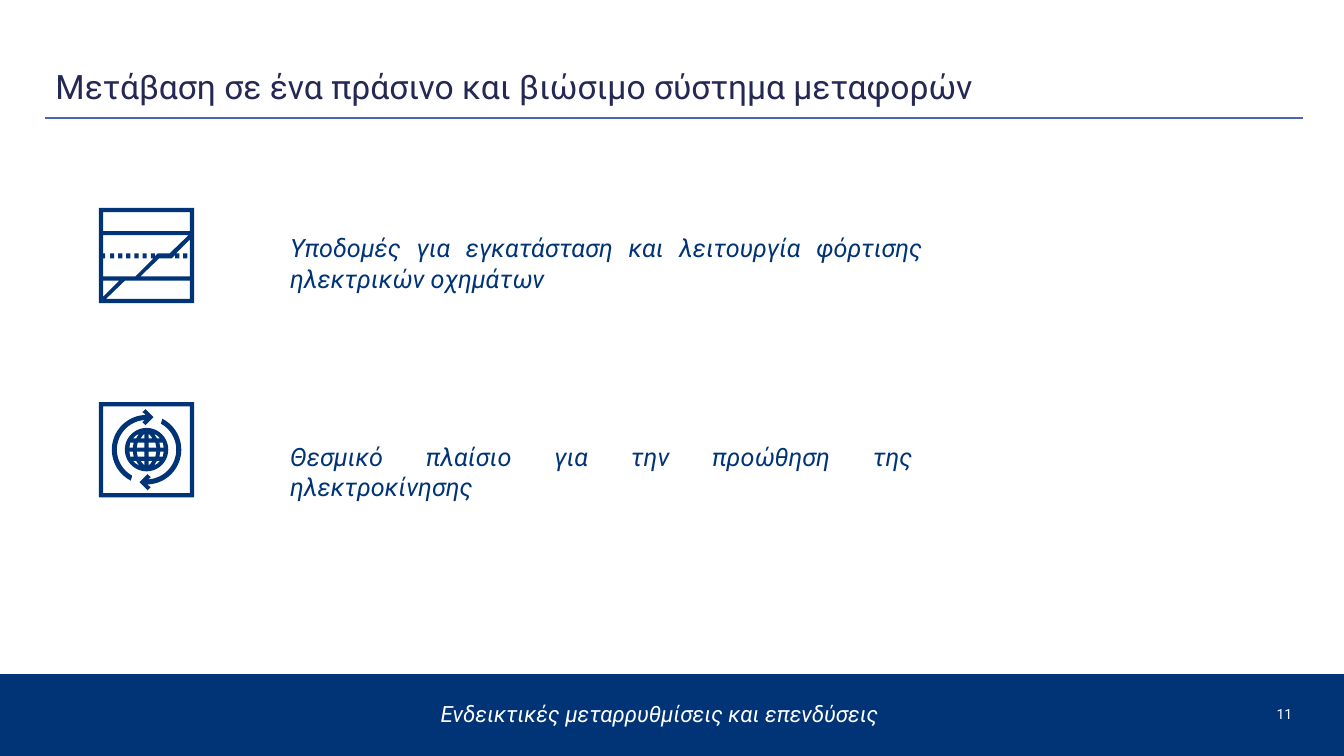
from math import cos, radians, sin

from lxml import etree
from pptx import Presentation
from pptx.dml.color import RGBColor
from pptx.enum import shapes as kinds, text as txt
from pptx.oxml import ns
from pptx.util import Pt

HUES = {"navy": "013476", "body": "003476", "title": "242852",
        "rule": "4A66AC", "white": "FFFFFF"}
FONT = "Roboto"
ICON = 68  # side of an icon
MID = ICON / 2


def hue(name):
    return RGBColor.from_string(HUES[name])


def write(shape, words, size, color, align, pads, slant=False,
          anchor=txt.MSO_ANCHOR.TOP):
    frame = shape.text_frame
    frame.word_wrap = True
    frame.auto_size = txt.MSO_AUTO_SIZE.NONE
    frame.vertical_anchor = anchor
    (frame.margin_left, frame.margin_top,
     frame.margin_right, frame.margin_bottom) = map(Pt, pads)
    para = frame.paragraphs[0]
    para.text = words
    para.alignment = align
    para.space_before = Pt(0)
    font = para.font
    font.name, font.size, font.italic = FONT, Pt(size), slant
    font.bold = False
    font.color.rgb = hue(color)


def label(slide, box, *args, **opts):
    write(slide.shapes.add_textbox(*map(Pt, box)), *args, **opts)


def trace(parent, left, top, loops):
    """Draw closed loops as one filled outline; inner loops are holes."""
    def place(x, y):
        return Pt(left + x), Pt(top + y)

    pen = None
    for loop in loops:
        first, *rest = [place(x, y) for x, y in loop]
        if pen is None:
            pen = parent.build_freeform(*first, scale=1.0)
        else:
            pen.move_to(*first)
        pen.add_line_segments(rest, close=True)
    shape = pen.convert_to_shape()
    shape.shadow.inherit = False
    shape.fill.solid()
    shape.fill.fore_color.rgb = hue("navy")
    shape.line.fill.background()


def rect(x1, y1, x2, y2):
    return [(x1, y1), (x1, y2), (x2, y2), (x2, y1)]


def arc(radius, start, stop, count=40):
    turns = [radians(start + (stop - start) * i / count)
             for i in range(count + 1)]
    return [(MID + radius * cos(t), MID + radius * sin(t)) for t in turns]


# Icon: charging road chart
def chart_icon(slide, left, top):
    upper = [(3, 49), (3, 36), (4.5, 36), (4.5, 32.5), (3, 32.5), (3, 19.5),
             (64, 19.5), (50.5, 32.5), (42, 32.5), (40, 34.5), (40, 32.5),
             (37, 32.5), (37, 36), (39, 36), (26, 49)]
    lower = [(65, 49), (29.5, 49), (43, 36), (52, 36), (54.5, 33.5),
             (54.5, 36), (57.5, 36), (57.5, 32.5), (55, 32.5), (65, 22.5)]
    corner = [(3, 52), (14.5, 52), (3, 63.5)]
    base = [(5, 65), (18.5, 52), (65, 52), (65, 65)]
    dots = [rect(7.9 + 5.8 * i, 32.5, 10.9 + 5.8 * i, 36)
            for i in (0, 1, 2, 3, 4, 9)]
    trace(slide.shapes, left, top,
          [rect(0, 0, ICON, ICON), rect(3, 3, 65, 16.5),
           upper, lower, corner, base, *dots])


# Icon: globe between two turning arrows
def globe_icon(slide, left, top):
    group = slide.shapes.add_group_shape().shapes
    trace(group, left, top, [rect(0, 0, ICON, ICON), rect(3, 3, 65, 65)])

    head = [(33.3, 12.4), (31, 14.4), (33.3, 16.5), (39, 10.8),
            (33.3, 5), (31, 7.2), (33.3, 8.9)]
    arrow = arc(21.2, 119, 268) + head + arc(24.8, 268, 117)
    trace(group, left, top, [arrow])
    trace(group, left, top, [[(ICON - x, ICON - y) for x, y in arrow]])

    # One quarter of the globe's panes, mirrored both ways
    panes = [[(1.5, 1.5), (7, 1.5), (6.3, 5), (1.5, 5)],
             [(9.8, 1.5), (12.2, 1.5), (11.7, 5), (9.2, 5)],
             [(1.5, 8), (4.2, 8), (3, 9.8), (1.5, 11.3)],
             [(7.4, 8), (9.7, 8), (7.8, 9.9), (5.4, 11.3)]]
    holes = [[(MID + h * x, MID + v * y) for x, y in pane]
             for h in (-1, 1) for v in (-1, 1) for pane in panes]
    trace(group, left, top, [arc(15.5, 0, 360), *holes])


def header(slide, left, top, width):
    title = slide.shapes.title
    title.left, title.top, title.width, title.height = map(
        Pt, (left, top, width, 60.5))
    write(title, "Μετάβαση σε ένα πράσινο και βιώσιμο σύστημα μεταφορών",
          24, "title", txt.PP_ALIGN.LEFT, [7.2] * 4)
    line = slide.shapes.add_connector(
        kinds.MSO_CONNECTOR.STRAIGHT, Pt(left - 0.5), Pt(top + 44.7),
        Pt(left + width + 4), Pt(top + 44.7))
    line.line.color.rgb = hue("rule")
    line.line.width = Pt(1)
    etree.SubElement(line._element.spPr, ns.qn("a:effectLst"))


def item(slide, left, top, icon, words, drop, height, pad):
    icon(slide, left, top)
    label(slide, (left + 108.5, top + drop, 480, height), words, 18, "body",
          txt.PP_ALIGN.JUSTIFY, (28.1, 3.6, pad, 3.6), slant=True)


def footer(slide, left, top, width, height):
    bar = slide.shapes.add_shape(kinds.MSO_SHAPE.RECTANGLE,
                                 *map(Pt, (left, top, width, height)))
    bar.shadow.inherit = False
    bar.fill.solid()
    bar.fill.fore_color.rgb = hue("navy")
    bar.line.fill.background()
    label(slide, (left + 284.4, top + 15.2, 373.7, 26.6),
          "Ενδεικτικές μεταρρυθμίσεις και επενδύσεις", 16, "white",
          txt.PP_ALIGN.CENTER, (7.2, 3.6, 7.2, 3.6), slant=True)
    label(slide, (left + 889.2, top + 8, 41, 41), "11", 10, "white",
          txt.PP_ALIGN.RIGHT, [7.2] * 4, anchor=txt.MSO_ANCHOR.MIDDLE)


def main():
    deck = Presentation()
    deck.slide_width, deck.slide_height = Pt(960), Pt(540)
    slide = deck.slides.add_slide(deck.slide_layouts[5])
    footer(slide, 0, 481.5, 960, 58.5)
    header(slide, 32.4, 39.6, 894.2)
    item(slide, 70.7, 148.5, chart_icon,
         "Υποδομές για εγκατάσταση και λειτουργία φόρτισης ηλεκτρικών "
         "οχημάτων", 14.2, 51, 0)
    item(slide, 70.7, 287.2, globe_icon,
         "Θεσμικό πλαίσιο για την προώθηση της ηλεκτροκίνησης", 24.6, 29, 7.2)
    deck.save("out.pptx")


if __name__ == "__main__":
    main()
